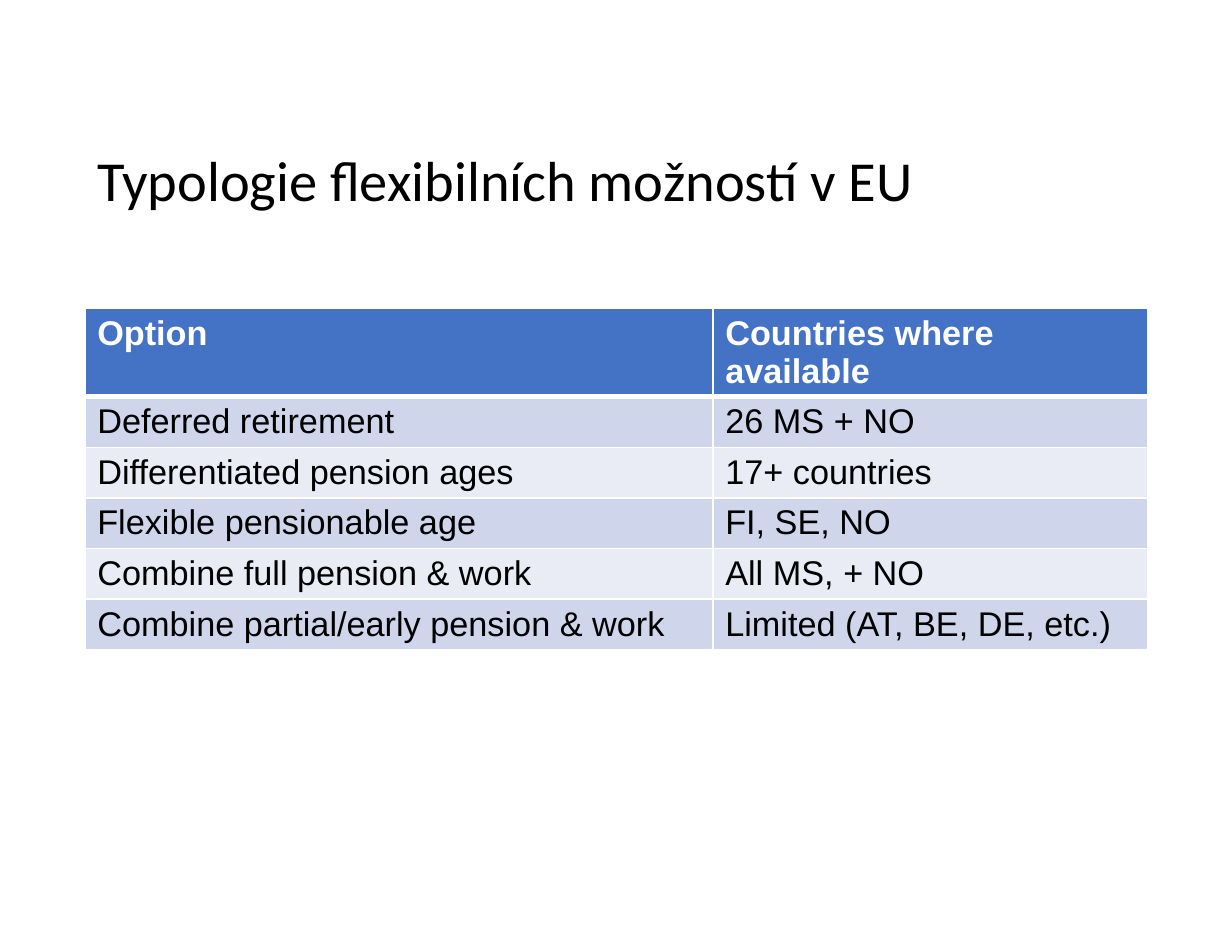
from lxml import etree
from pptx import Presentation
from pptx.dml.color import RGBColor
from pptx.enum.text import MSO_ANCHOR, MSO_AUTO_SIZE, PP_ALIGN
from pptx.oxml.ns import qn
from pptx.util import Emu, Pt

EMU_PER_PX = 914400 / 123.2
LEFT, MIDDLE = PP_ALIGN.LEFT, MSO_ANCHOR.MIDDLE
NO_AUTOFIT = MSO_AUTO_SIZE.NONE

WHITE, BLACK = "FFFFFF", "000000"
HEADER_FILL = "4472C4"
BAND_FILLS = ("CFD5EA", "E9EBF5")

COLUMN_WIDTHS = (628, 435)
HEADER_HEIGHT, ROW_HEIGHT = 88, 50
ROWS = (
    ("Option", "Countries where available"),
    ("Deferred retirement", "26 MS + NO"),
    ("Differentiated pension ages", "17+ countries"),
    ("Flexible pensionable age", "FI, SE, NO"),
    ("Combine full pension & work", "All MS, + NO"),
    ("Combine partial/early pension & work", "Limited (AT, BE, DE, etc.)"),
)


def px(n):
    return Emu(round(n * EMU_PER_PX))


def rgb(color):
    return RGBColor.from_string(color)


def write(tf, text, *, size, font, color=BLACK, bold=False, spacing=None):
    p = tf.paragraphs[0]
    p.alignment = LEFT
    p.line_spacing = spacing
    r = p.add_run()
    r.text = text
    r.font.size, r.font.name, r.font.bold = Pt(size), font, bold
    r.font.color.rgb = rgb(color)


def set_borders(cell, color, **widths):
    """Draw the cell edges; widths are in points, by edge L, R, T, B."""
    tcPr = cell._tc.get_or_add_tcPr()
    for i, edge in enumerate("LRTB"):
        ln = etree.Element(qn(f"a:ln{edge}"), w=str(Pt(widths.get(edge, 1))))
        fill = etree.SubElement(ln, qn("a:solidFill"))
        etree.SubElement(fill, qn("a:srgbClr"), val=color)
        tcPr.insert(i, ln)


def add_title(slide, text, x, y, w, h):
    sp = slide.shapes.title
    sp.left, sp.top, sp.width, sp.height = map(px, (x, y, w, h))
    tf = sp.text_frame
    tf.word_wrap, tf.auto_size, tf.vertical_anchor = True, NO_AUTOFIT, MIDDLE
    write(tf, text, size=33, font="Calibri", spacing=0.9)


def add_options_table(slide, x, y):
    height = HEADER_HEIGHT + ROW_HEIGHT * (len(ROWS) - 1)
    table = slide.shapes.add_table(
        len(ROWS), len(COLUMN_WIDTHS),
        px(x), px(y), px(sum(COLUMN_WIDTHS)), px(height)).table
    for column, width in zip(table.columns, COLUMN_WIDTHS):
        column.width = px(width)
    for i, texts in enumerate(ROWS):
        header = i == 0
        table.rows[i].height = px(HEADER_HEIGHT if header else ROW_HEIGHT)
        for j, text in enumerate(texts):
            cell = table.cell(i, j)
            cell.fill.solid()
            cell.fill.fore_color.rgb = rgb(
                HEADER_FILL if header else BAND_FILLS[(i - 1) % 2])
            # Thick rule between the header and the first row
            set_borders(cell, WHITE, T=3 if i == 1 else 1, B=3 if header else 1)
            write(cell.text_frame, text, size=20, font="Arial",
                  color=WHITE if header else BLACK, bold=header)


def main():
    prs = Presentation()
    prs.slide_width, prs.slide_height = px(1232), px(946)
    slide = prs.slides.add_slide(prs.slide_layouts[5])

    # Title
    add_title(slide, "Typologie flexibilních možností v EU", 85, 133, 1063, 100)

    # Options and the countries that offer them
    add_options_table(slide, 85, 308)

    prs.save("out.pptx")


if __name__ == "__main__":
    main()
